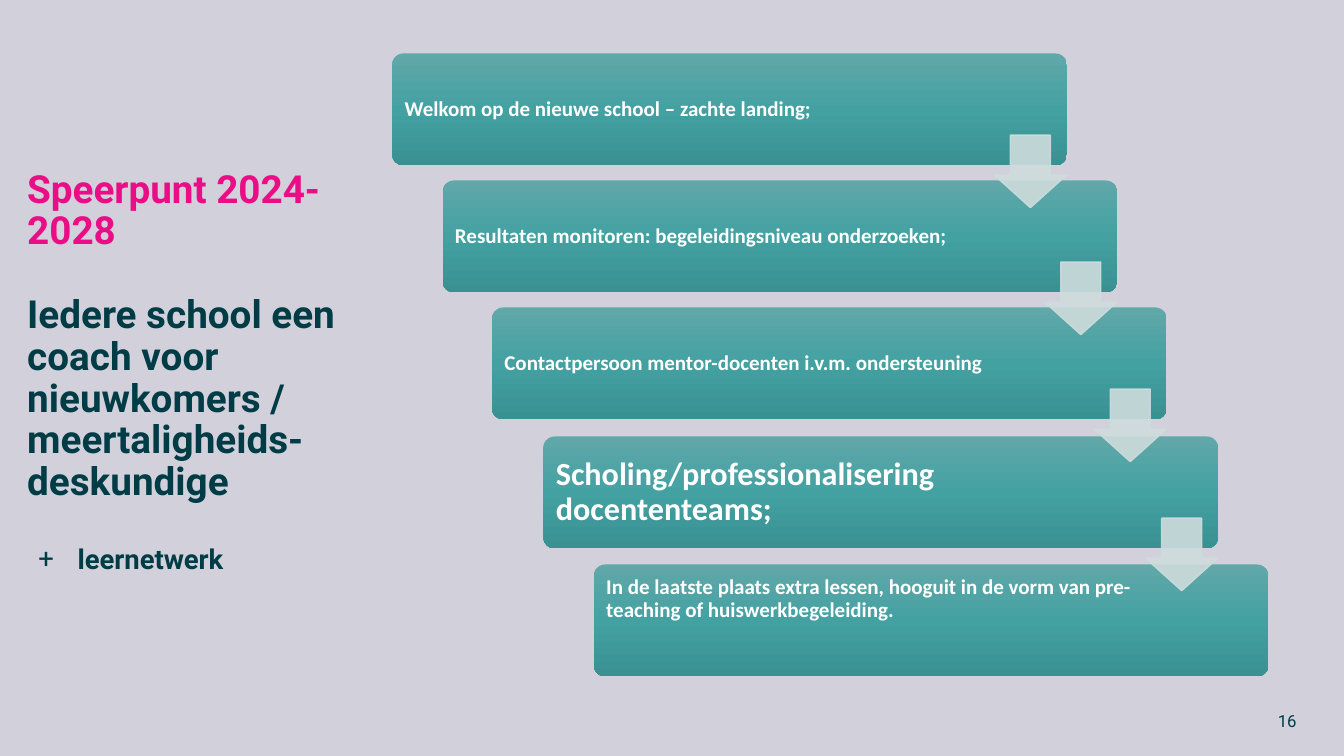
"""Build the slide on coaching for newcomers as a staircase of five steps."""
from copy import deepcopy
from dataclasses import dataclass

from lxml.etree import SubElement
from pptx import Presentation
from pptx.dml.color import RGBColor
from pptx.enum.shapes import MSO_SHAPE as Shape
from pptx.enum.text import MSO_ANCHOR as Anchor, MSO_AUTO_SIZE as AutoSize, PP_ALIGN as Align
from pptx.oxml.ns import qn
from pptx.util import Emu, Pt

PX = 9144
BACKGROUND = RGBColor(0xD2, 0xD1, 0xDB)
DARK = RGBColor(0x00, 0x3C, 0x46)
PINK = RGBColor(0xEA, 0x0D, 0x85)
WHITE = RGBColor(0xFF, 0xFF, 0xFF)
ARROW = RGBColor(0xCE, 0xDC, 0xDC)
GRADIENT = (
    (0, RGBColor(0x61, 0xA8, 0xA9)),
    (0.5, RGBColor(0x44, 0xA1, 0xA2)),
    (1, RGBColor(0x39, 0x91, 0x92)),
)


@dataclass(frozen=True)
class Step:
    left: int
    top: int
    text: str
    size: int = 15
    right_margin: int = 131
    anchor: Anchor = Anchor.MIDDLE


@dataclass(frozen=True)
class TitleLine:
    text: str
    color: RGBColor = DARK
    size: float = 27.6
    space_before: int = 0
    bullet: str = ""


STEPS = (
    Step(389, 53, "Welkom op de nieuwe school – zachte landing;"),
    Step(439, 179, "Resultaten monitoren: begeleidingsniveau onderzoeken;"),
    Step(488, 305, "Contactpersoon mentor-docenten i.v.m. ondersteuning"),
    Step(539, 433, "Scholing/professionalisering docententeams;", size=23, right_margin=56),
    Step(589, 560, "In de laatste plaats extra lessen, hooguit in de vorm van "
         "pre-teaching of huiswerkbegeleiding.", anchor=Anchor.TOP),
)
TITLE_LINES = (
    TitleLine("Speerpunt 2024-2028", color=PINK),
    TitleLine("Iedere school een coach voor nieuwkomers / meertaligheids-", space_before=30),
    TitleLine("deskundige"),
    TitleLine("leernetwerk", size=19.6, space_before=30, bullet="+"),
)


def px(*lengths: int) -> list[Emu]:
    return [Emu(length * PX) for length in lengths]


def set_frame(frame, margins: tuple[int, int, int, int], anchor: Anchor) -> None:
    frame.word_wrap = True
    frame.auto_size = AutoSize.NONE
    frame.vertical_anchor = anchor
    (frame.margin_left, frame.margin_top,
     frame.margin_right, frame.margin_bottom) = px(*margins)


def format_runs(paragraph, font_name: str, size: float, color: RGBColor, bold: bool) -> None:
    for run in paragraph.runs:
        run.font.name = font_name
        run.font.size = Pt(size)
        run.font.bold = bold
        run.font.color.rgb = color


def add_bullet(paragraph, character: str, color: RGBColor) -> None:
    properties = paragraph._p.get_or_add_pPr()
    left, indent = px(50, -39)
    properties.set("marL", str(left))
    properties.set("indent", str(indent))
    bullet_color = SubElement(properties, qn("a:buClr"))
    SubElement(bullet_color, qn("a:srgbClr"), val=str(color))
    SubElement(properties, qn("a:buFont"), typeface="Roboto")
    SubElement(properties, qn("a:buChar"), char=character)


def fill_title(title) -> None:
    title.left, title.top, title.width, title.height = px(17, 156, 365, 420)
    frame = title.text_frame
    set_frame(frame, (10, 5, 10, 5), Anchor.BOTTOM)
    frame.text = "\n".join(line.text for line in TITLE_LINES)
    for paragraph, line in zip(frame.paragraphs, TITLE_LINES):
        if line.bullet:
            add_bullet(paragraph, line.bullet, line.color)
        paragraph.alignment = Align.LEFT
        paragraph.line_spacing = 0.9
        paragraph.space_before = Pt(line.space_before)
        format_runs(paragraph, "Roboto", line.size, line.color, True)


def add_step(slide, step: Step) -> None:
    shape = slide.shapes.add_shape(Shape.ROUNDED_RECTANGLE, *px(step.left, step.top, 669, 111))
    shape.adjustments[0] = 0.1
    shape.shadow.inherit = False
    shape.line.fill.background()
    shape.fill.gradient()
    shape.fill.gradient_angle = 270
    stop_list = shape._element.spPr.find(".//" + qn("a:gsLst"))
    stop_list.insert(1, deepcopy(stop_list[0]))
    for stop, (position, color) in zip(shape.fill.gradient_stops, GRADIENT):
        stop.position = position
        stop.color.rgb = color
    frame = shape.text_frame
    set_frame(frame, (9, 9, step.right_margin, 9), step.anchor)
    frame.text = step.text
    paragraph = frame.paragraphs[0]
    paragraph.alignment = Align.LEFT
    paragraph.line_spacing = 0.9
    format_runs(paragraph, "Calibri", step.size, WHITE, True)


def add_arrow(slide, step: Step) -> None:
    arrow = slide.shapes.add_shape(Shape.DOWN_ARROW, *px(step.left + 597, step.top + 81, 72, 72))
    arrow.adjustments[0] = 0.55
    arrow.adjustments[1] = 0.45
    arrow.shadow.inherit = False
    arrow.fill.solid()
    arrow.fill.fore_color.rgb = ARROW
    arrow.line.color.rgb = ARROW
    arrow.line.width = Pt(1)
    for color in arrow._element.spPr.iter(qn("a:srgbClr")):
        SubElement(color, qn("a:alpha"), val="90000")


def add_page_number(slide, number: str) -> None:
    frame = slide.shapes.add_textbox(*px(996, 695, 300, 40)).text_frame
    set_frame(frame, (10, 5, 10, 5), Anchor.MIDDLE)
    frame.text = number
    frame.paragraphs[0].alignment = Align.RIGHT
    format_runs(frame.paragraphs[0], "Roboto", 12, DARK, False)


def main() -> None:
    presentation = Presentation()
    presentation.slide_width, presentation.slide_height = px(1333, 750)
    slide = presentation.slides.add_slide(presentation.slide_layouts.get_by_name("Title Only"))
    slide.background.fill.solid()
    slide.background.fill.fore_color.rgb = BACKGROUND
    fill_title(slide.shapes.title)
    for step in STEPS:
        add_step(slide, step)
    for step in STEPS[:-1]:
        add_arrow(slide, step)
    add_page_number(slide, "16")
    presentation.save("out.pptx")


if __name__ == "__main__":
    main()
